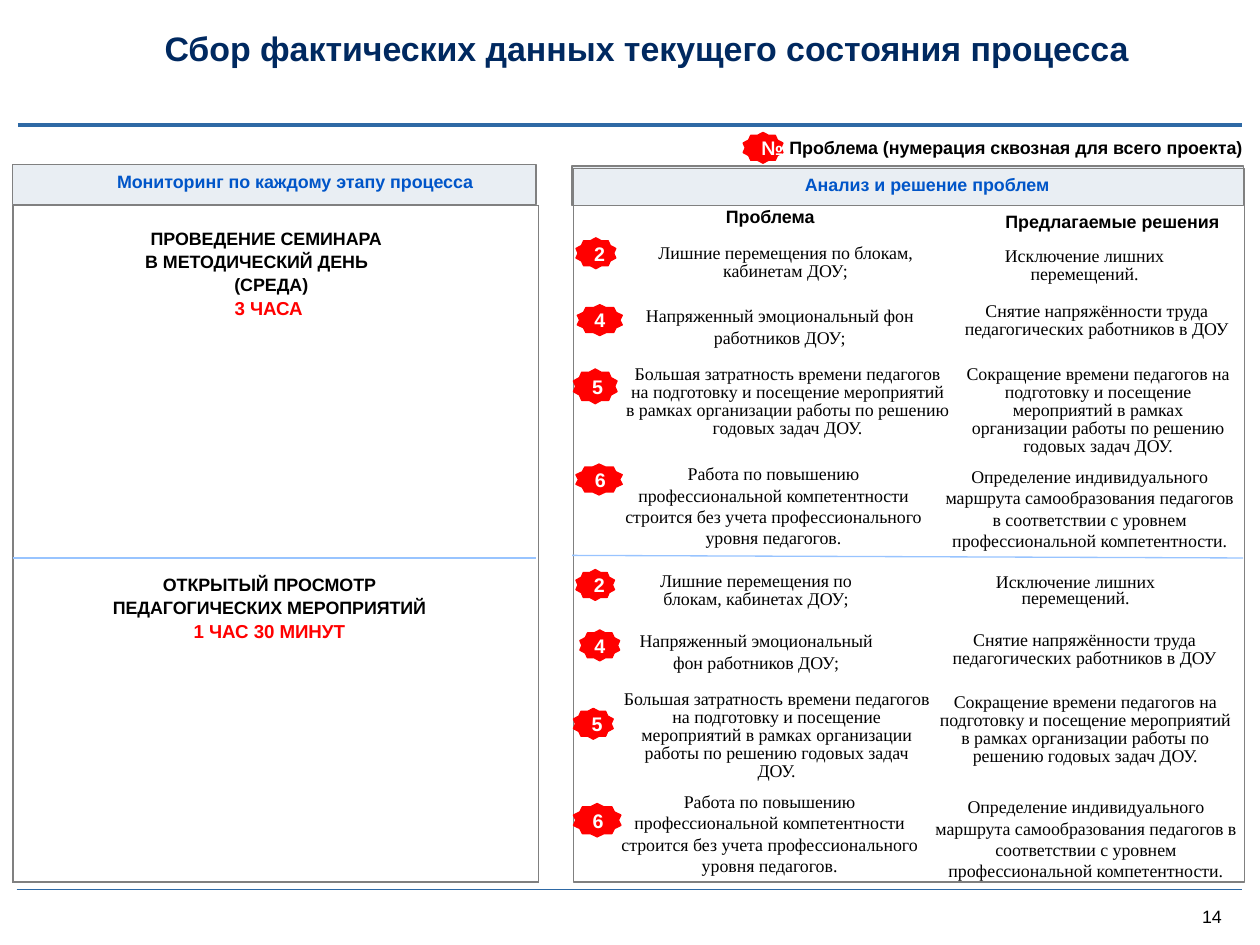
from lxml import etree
from pptx import Presentation
from pptx.dml.color import RGBColor
from pptx.enum.shapes import MSO_CONNECTOR, MSO_SHAPE
from pptx.enum.text import MSO_ANCHOR, PP_ALIGN
from pptx.oxml import parse_xml
from pptx.oxml.ns import nsdecls, qn
from pptx.util import Inches, Pt

COLORS = {
    "title": "002960", "heading": "0055C8", "header_fill": "E9EEF3",
    "frame": "808080", "rule": "2E69A5", "divider": "98C4FF",
    "red": "FF0000", "white": "FFFFFF", "black": "000000",
}
SANS, SERIF = "Arial", "Times New Roman"


def write(shape, lines, size=10, color="black", font=SANS, bold=True, inset=(0, 0),
          align=PP_ALIGN.CENTER, anchor=MSO_ANCHOR.TOP, spacing=None):
    """Each line is a paragraph; a newline inside it is a line break."""
    frame = shape.text_frame
    frame.word_wrap = True
    frame.vertical_anchor = anchor
    frame.margin_left = frame.margin_right = Inches(inset[0])
    frame.margin_top = frame.margin_bottom = Inches(inset[1])
    for index, line in enumerate(lines):
        paragraph = frame.paragraphs[0] if index == 0 else frame.add_paragraph()
        paragraph.alignment = align
        if spacing:
            paragraph.line_spacing = spacing
        for part_index, part in enumerate(line.split("\n")):
            if part_index:
                paragraph.add_line_break()
            run = paragraph.add_run()
            run.text = part
            run.font.name, run.font.size, run.font.bold = font, Pt(size), bold
            run.font.color.rgb = RGBColor.from_string(COLORS[color])
    return frame


def add_box(kind, box, fill=None, line="frame"):
    shape = slide.shapes.add_shape(kind, *map(Inches, box))
    shape.shadow.inherit = False
    if fill:
        shape.fill.solid()
        shape.fill.fore_color.rgb = RGBColor.from_string(COLORS[fill])
    else:
        shape.fill.background()
    shape.line.color.rgb = RGBColor.from_string(COLORS[line])
    shape.line.width = Pt(0.75)
    return shape


prs = Presentation()
prs.slide_width, prs.slide_height = Inches(9.8), Inches(7.35)
slide = prs.slides.add_slide(prs.slide_layouts[6])

# Column headers and the frame of the right column
add_box(MSO_SHAPE.RECTANGLE, (0.1, 1.28, 4.07, 0.31), "header_fill")
add_box(MSO_SHAPE.RECTANGLE, (4.45, 1.29, 5.22, 0.31), "header_fill")
add_box(MSO_SHAPE.RECTANGLE, (4.46, 1.31, 5.22, 5.55))

# Monitoring table with a single cell
monitoring = slide.shapes.add_table(1, 1, *map(Inches, (0.1, 1.6, 4.09, 5.26))).table
cell = monitoring.cell(0, 0)
cell.fill.solid()
cell.fill.fore_color.rgb = RGBColor.from_string(COLORS["white"])
for position, side in enumerate(("lnL", "lnR", "lnT", "lnB")):
    cell_border = parse_xml(
        f'<a:{side} {nsdecls("a")} w="12700"><a:solidFill>'
        f'<a:srgbClr val="{COLORS["frame"]}"/></a:solidFill></a:{side}>')
    cell._tc.get_or_add_tcPr().insert(position, cell_border)

# Rules and dividers
for x1, y1, x2, y2, color, width in (
    (0.14, 0.97, 9.66, 0.97, "rule", 2.25),
    (0.13, 6.92, 9.66, 6.92, "rule", 0.75),
    (0.1, 4.34, 4.17, 4.34, "divider", 0.75),
    (4.45, 4.32, 9.67, 4.34, "divider", 0.75),
):
    rule = slide.shapes.add_connector(MSO_CONNECTOR.STRAIGHT, *map(Inches, (x1, y1, x2, y2)))
    rule.line.color.rgb = RGBColor.from_string(COLORS[color])
    rule.line.width = Pt(width)
    etree.SubElement(rule._element.spPr, qn("a:effectLst"))

# Title, headings and page number
MIDDLE = {"anchor": MSO_ANCHOR.MIDDLE}
LEFT = {"align": PP_ALIGN.LEFT}
for box, text, style in (
    ((1.28, 0.21, 7.6, 0.32), "Сбор фактических данных текущего состояния процесса",
     {"size": 19, "color": "title", **LEFT, **MIDDLE}),
    ((0.38, 1.33, 3.83, 0.17), "Мониторинг по каждому этапу процесса", {"color": "heading"}),
    ((6.02, 1.35, 2.38, 0.17), "Анализ и решение проблем", {"color": "heading"}),
    ((6.14, 1.06, 3.6, 0.17), "Проблема (нумерация сквозная для всего проекта)", LEFT),
    ((5.3, 1.6, 1.38, 0.17), "Проблема", {}),
    ((7.82, 1.64, 1.83, 0.17), "Предлагаемые решения", LEFT),
    ((9.35, 7.04, 0.23, 0.17), "14", {"bold": False, **LEFT, **MIDDLE}),
):
    write(slide.shapes.add_textbox(*map(Inches, box)), [text], **style)

# Monitored stages: the last line is the duration, indents shift single lines
for box, lines, indents in (
    ((0.3, 1.71, 3.39, 0.83),
     ["ПРОВЕДЕНИЕ СЕМИНАРА", "В МЕТОДИЧЕСКИЙ ДЕНЬ", "(СРЕДА)", "3 ЧАСА"],
     (0.15, 0, 0.23, 0.19)),
    ((0.4, 4.4, 3.39, 0.94),
     ["ОТКРЫТЫЙ ПРОСМОТР", "ПЕДАГОГИЧЕСКИХ МЕРОПРИЯТИЙ", "1 ЧАС 30 МИНУТ"],
     (0, 0, 0)),
):
    stage = write(slide.shapes.add_textbox(*map(Inches, box)), lines,
                  inset=(0.1, 0.05), spacing=1.07)
    for paragraph, indent in zip(stage.paragraphs, indents):
        paragraph._p.get_or_add_pPr().set("marL", str(Inches(indent)))
    duration = stage.paragraphs[-1].runs[0].font
    duration.size = Pt(10.5)
    duration.color.rgb = RGBColor.from_string(COLORS["red"])

# Numbered markers
for number, box in (
    ("№", (5.78, 1.03, 0.31, 0.24)),
    ("2", (4.48, 1.85, 0.31, 0.24)), ("4", (4.49, 2.37, 0.35, 0.24)),
    ("5", (4.46, 2.87, 0.34, 0.27)), ("6", (4.48, 3.61, 0.36, 0.24)),
    ("2", (4.48, 4.43, 0.3, 0.24)), ("4", (4.51, 4.9, 0.31, 0.24)),
    ("5", (4.46, 5.51, 0.31, 0.24)), ("6", (4.46, 6.25, 0.37, 0.26)),
):
    marker = add_box(MSO_SHAPE.STAR_10_POINT, box, "red", "red")
    write(marker, [number], size=11, color="white", inset=(0 if number == "4" else 0.1, 0.05), **MIDDLE)

# Problems and solutions: text, line spacing, insets, place in each half
TIGHT, PADDED = (0, 0), (0.1, 0.05)
EXTRA_EFFORT = ("Большая затратность времени педагогов на подготовку и посещение мероприятий "
                "в рамках организации работы по решению годовых задач{}ДОУ.")
SELF_STUDY = ("Определение индивидуального маршрута самообразования педагогов{}"
              "в соответствии с уровнем профессиональной компетентности.")
STRESS = "Напряженный эмоциональный фон работников ДОУ;"
RELIEF = "Снятие напряжённости труда педагогических работников в ДОУ"
LESS_TIME = ("Сокращение времени педагогов на подготовку и посещение мероприятий "
             "в рамках организации работы по решению годовых задач ДОУ.")
NO_MOVES = "Исключение лишних перемещений."
SKILLS = ("Работа по повышению профессиональной компетентности строится "
          "без учета профессионального уровня педагогов.")
for text, points, inset, box in (
    ("Лишние перемещения по блокам, кабинетам ДОУ;", 10, TIGHT, (5.06, 1.91, 2.1, 0.28)),
    (NO_MOVES, 10, PADDED, (7.38, 1.88, 2.11, 0.38)),
    (STRESS, None, TIGHT, (4.83, 2.37, 2.47, 0.34)),
    (RELIEF, 10, TIGHT, (7.49, 2.36, 2.08, 0.42)),
    (EXTRA_EFFORT.format(" "), 10, TIGHT, (4.86, 2.85, 2.53, 0.56)),
    (LESS_TIME, 10, TIGHT, (7.5, 2.85, 2.08, 0.7)),
    (SKILLS, None, PADDED, (4.72, 3.55, 2.59, 0.77)),
    (SELF_STUDY.format("\n"), None, PADDED, (7.16, 3.57, 2.63, 0.77)),
    ("Лишние перемещения по блокам, кабинетах ДОУ;", 10, TIGHT, (4.95, 4.46, 1.86, 0.28)),
    (NO_MOVES, 9, PADDED, (7.24, 4.43, 2.25, 0.35)),
    (STRESS, None, TIGHT, (4.94, 4.9, 1.88, 0.34)),
    (RELIEF, 10, TIGHT, (7.31, 4.92, 2.25, 0.28)),
    (EXTRA_EFFORT.format("\n"), 10, TIGHT, (4.84, 5.38, 2.4, 0.7)),
    (LESS_TIME, 10, TIGHT, (7.3, 5.4, 2.28, 0.7)),
    (SKILLS, None, PADDED, (4.69, 6.1, 2.59, 0.77)),
    (SELF_STUDY.format(" "), None, PADDED, (7.14, 6.14, 2.61, 0.77)),
):
    write(slide.shapes.add_textbox(*map(Inches, box)), text.split("\n") if inset == PADDED else [text],
          font=SERIF, bold=False, inset=inset, spacing=Pt(points) if points else None)

prs.save("out.pptx")
